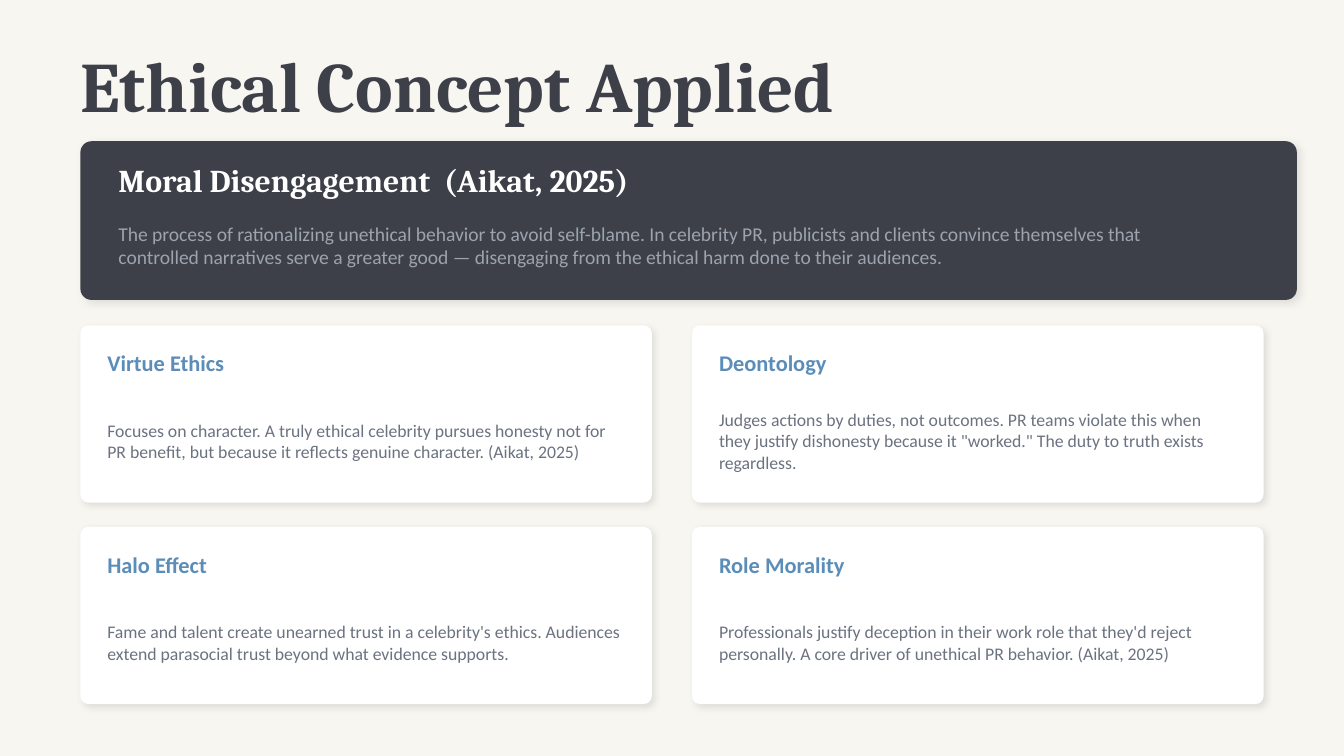
from lxml.etree import SubElement
from pptx import Presentation
from pptx.dml.color import RGBColor
from pptx.enum.shapes import MSO_SHAPE as Preset
from pptx.enum.text import MSO_ANCHOR as Anchor
from pptx.oxml.ns import qn
from pptx.util import Cm, Pt

COLORS = {
    "background": "F8F6F1",
    "dark": "3D4048",
    "white": "FFFFFF",
    "blue": "5B8DB8",
    "light_gray": "9CA3AF",
    "gray": "6B7280",
    "shadow": "000000",
}

# Font settings and colour of each text role
STYLES = {
    "title": ({"name": "Cambria", "size": Pt(38), "bold": True}, "dark"),
    "panel_heading": ({"name": "Cambria", "size": Pt(17), "bold": True}, "white"),
    "panel_body": ({"name": "Calibri", "size": Pt(10.5)}, "light_gray"),
    "card_heading": ({"name": "Calibri", "size": Pt(12), "bold": True}, "blue"),
    "card_body": ({"name": "Calibri", "size": Pt(9.5)}, "gray"),
}

FRAME = {
    "word_wrap": True,
    "vertical_anchor": Anchor.MIDDLE,
    "margin_left": 0,
    "margin_top": 0,
    "margin_right": 0,
    "margin_bottom": 0,
}

CARDS = [
    ("Virtue Ethics",
     "Focuses on character. A truly ethical celebrity pursues honesty not for "
     "PR benefit, but because it reflects genuine character. (Aikat, 2025)"),
    ("Deontology",
     "Judges actions by duties, not outcomes. PR teams violate this when they "
     'justify dishonesty because it "worked." The duty to truth exists regardless.'),
    ("Halo Effect",
     "Fame and talent create unearned trust in a celebrity's ethics. Audiences "
     "extend parasocial trust beyond what evidence supports."),
    ("Role Morality",
     "Professionals justify deception in their work role that they'd reject "
     "personally. A core driver of unethical PR behavior. (Aikat, 2025)"),
]

# Layout in centimetres
MARGIN = 1.52
CARD_TOP = 6.15
CARD_WIDTH, CARD_HEIGHT = 10.8, 3.35
COLUMN_STEP, ROW_STEP = 11.56, 3.81
CARD_PADDING = 0.51


def color(name):
    return RGBColor.from_string(COLORS[name])


def set_format(target, values):
    for name, value in values.items():
        setattr(target, name, value)


def add_text(slide, text, style, left, top, width, height):
    box = slide.shapes.add_textbox(Cm(left), Cm(top), Cm(width), Cm(height))
    set_format(box.text_frame, FRAME)
    run = box.text_frame.paragraphs[0].add_run()
    run.text = text
    font_values, color_name = STYLES[style]
    set_format(run.font, font_values)
    run.font.color.rgb = color(color_name)


def add_soft_shadow(shape):
    shape.shadow.inherit = False
    effects = shape._element.spPr.find(qn("a:effectLst"))
    shadow = SubElement(effects, qn("a:outerShdw"), {
        "blurRad": str(Pt(4)),
        "dist": str(Pt(2)),
        "dir": str(45 * 60000),
        "algn": "bl",
        "rotWithShape": "0",
    })
    tint = SubElement(shadow, qn("a:srgbClr"), val=COLORS["shadow"])
    SubElement(tint, qn("a:alpha"), val="9000")


def add_rounded_box(slide, fill, corner, left, top, width, height):
    shape = slide.shapes.add_shape(
        Preset.ROUNDED_RECTANGLE, Cm(left), Cm(top), Cm(width), Cm(height))
    shape.adjustments[0] = corner
    shape.fill.solid()
    shape.fill.fore_color.rgb = color(fill)
    shape.line.fill.background()
    add_soft_shadow(shape)


def add_panel(slide):
    add_rounded_box(slide, "dark", 0.07, MARGIN, 2.67, 22.99, 3)
    add_text(slide, "Moral Disengagement  (Aikat, 2025)", "panel_heading",
             2.24, 2.92, 20.32, 0.97)
    add_text(slide,
             "The process of rationalizing unethical behavior to avoid self-blame. "
             "In celebrity PR, publicists and clients convince themselves that "
             "controlled narratives serve a greater good — disengaging from the "
             "ethical harm done to their audiences.",
             "panel_body", 2.24, 3.94, 20.32, 1.4)


def add_card(slide, heading, body, left, top):
    add_rounded_box(slide, "white", 0.045, left, top, CARD_WIDTH, CARD_HEIGHT)
    text_left = left + CARD_PADDING
    text_width = CARD_WIDTH - 2 * CARD_PADDING
    add_text(slide, heading, "card_heading", text_left, top + 0.3, text_width, 0.81)
    add_text(slide, body, "card_body", text_left, top + 1.22, text_width, 1.93)


def main():
    presentation = Presentation()
    presentation.slide_width = Cm(25.4)
    presentation.slide_height = Cm(14.29)
    slide = presentation.slides.add_slide(presentation.slide_layouts[6])
    slide.background.fill.solid()
    slide.background.fill.fore_color.rgb = color("background")

    # Title and key concept
    add_text(slide, "Ethical Concept Applied", "title", MARGIN, 0.81, 22.35, 1.57)
    add_panel(slide)

    # Two-by-two grid of supporting concepts
    for index, (heading, body) in enumerate(CARDS):
        row, column = divmod(index, 2)
        add_card(slide, heading, body,
                 MARGIN + column * COLUMN_STEP, CARD_TOP + row * ROW_STEP)

    presentation.save("out.pptx")


if __name__ == "__main__":
    main()
